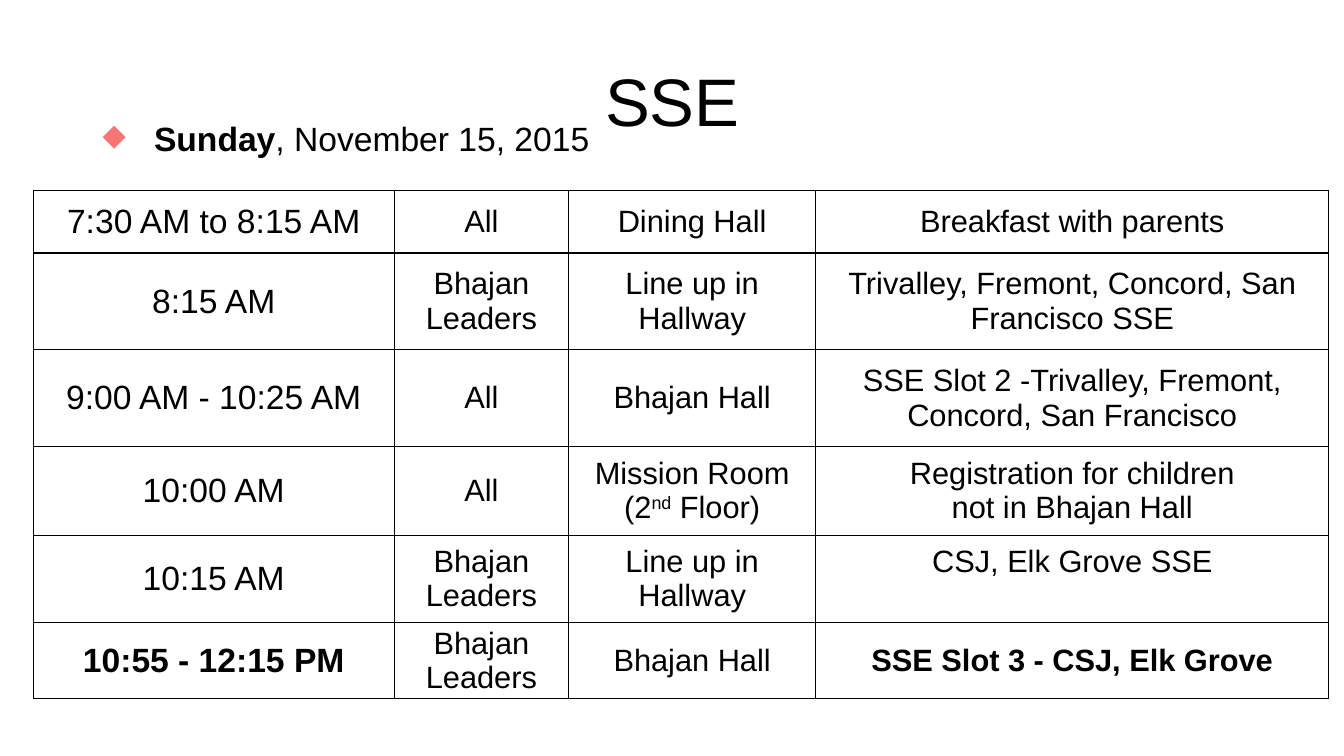
"""Build the SSE Sunday schedule slide."""
from lxml import etree
from pptx import Presentation
from pptx import util as u
from pptx.dml.color import RGBColor
from pptx.enum import text
from pptx.oxml import ns

TITLE = "SSE"
DATE = [("Sunday", True), (", November 15, 2015", False)]
SCHEDULE = [
    ("7:30 AM to 8:15 AM", "All", "Dining Hall", "Breakfast with parents"),
    ("8:15 AM", "Bhajan Leaders", "Line up in Hallway",
     "Trivalley, Fremont, Concord, San Francisco SSE"),
    ("9:00 AM - 10:25 AM", "All", "Bhajan Hall",
     "SSE Slot 2 -Trivalley, Fremont, Concord, San Francisco"),
    ("10:00 AM", "All", ("Mission Room (2", "nd", " Floor)"),
     "Registration for children\vnot in Bhajan Hall"),
    ("10:15 AM", "Bhajan Leaders", "Line up in Hallway", "CSJ, Elk Grove SSE"),
    ("10:55 - 12:15 PM", "Bhajan Leaders", "Bhajan Hall", "SSE Slot 3 - CSJ, Elk Grove"),
]
COLUMN_WIDTHS = [3.58, 1.73, 2.45, 5.09]
ROW_HEIGHTS = [0.62, 0.96, 0.96, 0.88, 0.87, 0.72]
BOLD_CELLS = {(5, 0), (5, 3)}
RAISED_CELL = (4, 3)
FONT, INK, BULLET = "Arial", "000000", "F77574"


def color(value):
    return RGBColor.from_string(value)


def style(paragraph, size):
    paragraph.font.name = FONT
    paragraph.font.size = u.Pt(size)
    paragraph.font.color.rgb = color(INK)


def add_text_box(slide, left, top, width, height):
    box = slide.shapes.add_textbox(*map(u.Inches, (left, top, width, height)))
    box.text_frame.word_wrap = True
    return box.text_frame


def add_child(parent, tag, **attributes):
    return etree.SubElement(parent, ns.qn(tag), attributes)


def add_bullet(paragraph):
    properties = paragraph._p.get_or_add_pPr()
    properties.set("marL", str(u.Inches(0.51)))
    properties.set("indent", str(-u.Inches(0.51)))
    add_child(add_child(properties, "a:buClr"), "a:srgbClr", val=BULLET)
    add_child(properties, "a:buSzPct", val="90000")
    add_child(properties, "a:buChar", char="◆")


def add_borders(cell):
    properties = cell._tc.get_or_add_tcPr()
    for side in ("a:lnL", "a:lnR", "a:lnT", "a:lnB"):
        line = add_child(properties, side, w=str(u.Pt(1)))
        add_child(add_child(line, "a:solidFill"), "a:srgbClr", val=INK)


def fill_cell(cell, content, row, column):
    add_borders(cell)
    cell.fill.background()
    cell.vertical_anchor = text.MSO_ANCHOR.MIDDLE
    cell.margin_left = cell.margin_right = cell.margin_top = u.Inches(0.01)
    cell.margin_bottom = u.Inches(0.35 if (row, column) == RAISED_CELL else 0.01)
    paragraph = cell.text_frame.paragraphs[0]
    if isinstance(content, tuple):
        for part in content:
            paragraph.add_run().text = part
        paragraph.runs[1]._r.get_or_add_rPr().set("baseline", "30000")
    else:
        paragraph.text = content
    paragraph.alignment = text.PP_ALIGN.CENTER
    style(paragraph, 24 if column == 0 else 22)
    paragraph.font.bold = (row, column) in BOLD_CELLS


def add_schedule(slide):
    frame = slide.shapes.add_table(
        len(SCHEDULE), len(COLUMN_WIDTHS), u.Inches(0.33), u.Inches(1.89),
        u.Inches(sum(COLUMN_WIDTHS)), u.Inches(sum(ROW_HEIGHTS)))
    table = frame.table
    table.first_row = table.horz_banding = False
    for column, width in zip(table.columns, COLUMN_WIDTHS):
        column.width = u.Inches(width)
    for row, height in zip(table.rows, ROW_HEIGHTS):
        row.height = u.Inches(height)
    for row, entries in enumerate(SCHEDULE):
        for column, content in enumerate(entries):
            fill_cell(table.cell(row, column), content, row, column)


def main():
    presentation = Presentation()
    presentation.slide_width = u.Inches(13.33)
    presentation.slide_height = u.Inches(7.5)
    slide = presentation.slides.add_slide(presentation.slide_layouts[6])

    title = add_text_box(slide, 0.92, 0.4, 11.5, 1.18)
    title.vertical_anchor = text.MSO_ANCHOR.MIDDLE
    title.text = TITLE
    title.paragraphs[0].alignment = text.PP_ALIGN.CENTER
    style(title.paragraphs[0], 48)

    date = add_text_box(slide, 0.92, 1.12, 11.51, 5.47).paragraphs[0]
    add_bullet(date)
    for words, bold in DATE:
        run = date.add_run()
        run.text = words
        run.font.bold = bold
    style(date, 24)

    add_schedule(slide)
    presentation.save("out.pptx")


if __name__ == "__main__":
    main()
